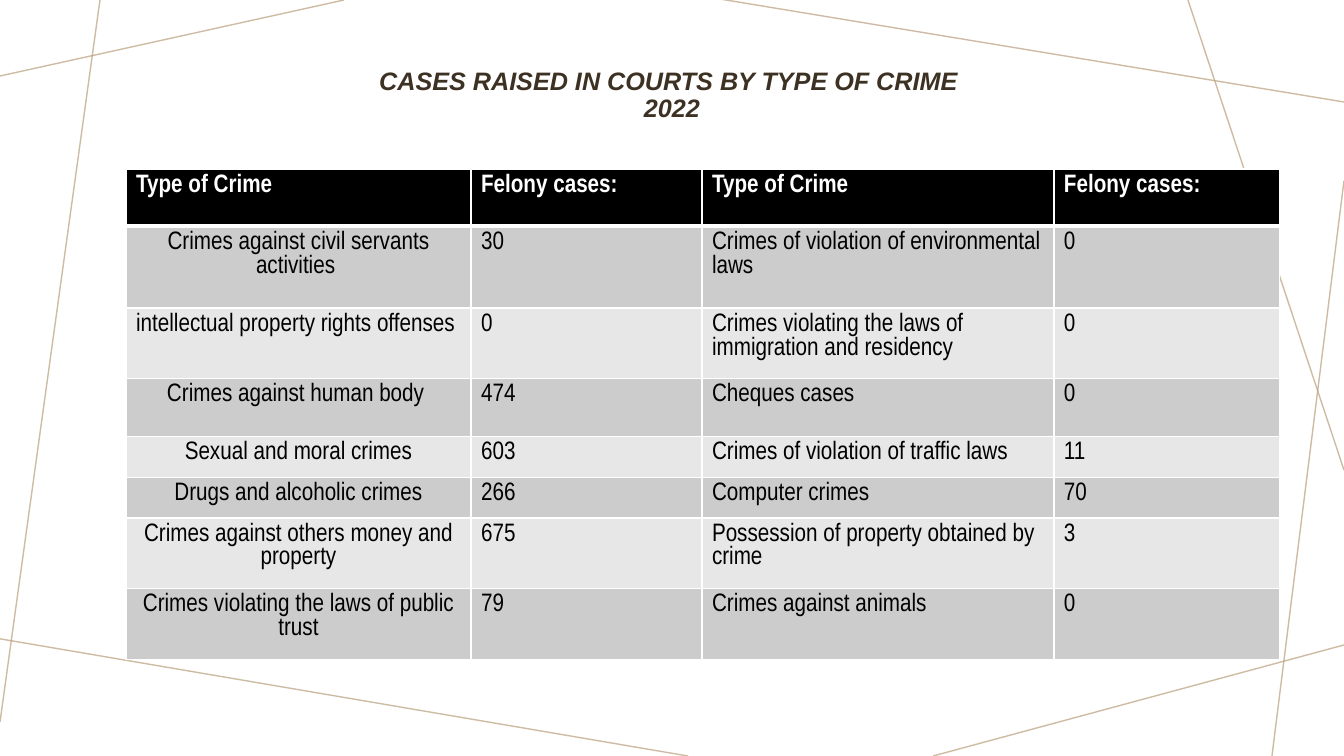
from lxml.etree import SubElement
from pptx import Presentation
from pptx.dml.color import RGBColor
from pptx.enum.shapes import MSO_CONNECTOR
from pptx.enum.text import MSO_ANCHOR, PP_ALIGN
from pptx.oxml.ns import qn
from pptx.util import Pt

PX = 12192000 / 1344
TAN, BROWN, BLACK, WHITE = "B9A07D", "3C3122", "000000", "FFFFFF"
BANDS = ["CCCCCC", "E7E7E7"]


def px(*lengths):
    """Turn pixel lengths into EMU."""
    return [round(length * PX) for length in lengths]


def write(frame, text, font="Arial Narrow", color=BLACK, bold=False,
          italic=False, align=PP_ALIGN.LEFT, spacing=None):
    frame.word_wrap = True
    para = frame.paragraphs[0]
    para.text = text
    para.alignment = align
    para.line_spacing = spacing
    for span in para.runs:
        span.font.name = font
        span.font.size = Pt(18)
        span.font.bold = bold
        span.font.italic = italic
        span.font.color.rgb = RGBColor.from_string(color)


deck = Presentation()
deck.slide_width, deck.slide_height = px(1344, 756)
page = deck.slides.add_slide(deck.slide_layouts[6])

# Background lines: start x, start y, end x, end y
background_lines = [
    (344, 0, 0, 76), (100, 0, 0, 722), (688, 756, -5, 638),
    (1344, 645, 933, 756), (1344, 181, 1272, 756),
    (1344, 470, 1188, 0), (1344, 102, 720, -1),
]
for ends in background_lines:
    line = page.shapes.add_connector(MSO_CONNECTOR.STRAIGHT, *px(*ends))
    line.line.width = Pt(1)
    line.line.color.rgb = RGBColor.from_string(TAN)
    tint = next(line.line._ln.iter(qn("a:srgbClr")))
    SubElement(tint, qn("a:alpha"), val="70000")
    SubElement(line._element.spPr, qn("a:effectLst"))

# Title
title = page.shapes.add_textbox(*px(126, 58, 1092, 152)).text_frame
title.vertical_anchor = MSO_ANCHOR.TOP
title.margin_top = px(11)[0]
write(title, "CASES RAISED IN COURTS BY TYPE OF CRIME \v2022", font="Arial",
      color=BROWN, bold=True, italic=True, align=PP_ALIGN.CENTER, spacing=0.9)

# Table of cases
rows = [
    ("Type of Crime", "Felony cases:", "Type of Crime", "Felony cases:"),
    ("Crimes against civil servants activities ", "30",
     "Crimes of violation of environmental laws", "0"),
    ("intellectual property rights offenses ", "0",
     "Crimes violating the laws of immigration and residency", "0"),
    ("Crimes against human body ", "474", "Cheques cases", "0"),
    ("Sexual and moral crimes", "603",
     "Crimes of violation of traffic laws", "11"),
    ("Drugs and alcoholic crimes", "266", "Computer crimes", "70"),
    ("Crimes against others money and property", "675",
     "Possession of property obtained by crime", "3"),
    ("Crimes violating the laws of public trust", "79",
     "Crimes against animals", "0"),
]
column_widths = [345, 231, 352, 226]
row_heights = [57, 82, 57, 58, 41, 40, 58, 57]
place = px(126, 169, sum(column_widths), sum(row_heights))
table = page.shapes.add_table(len(rows), len(column_widths), *place).table
for column, width in zip(table.columns, px(*column_widths)):
    column.width = width
for row, height in zip(table.rows, px(*row_heights)):
    row.height = height

for r, texts in enumerate(rows):
    header = r == 0
    for c, text in enumerate(texts):
        cell = table.cell(r, c)
        centered = c == 0 and not header
        write(cell.text_frame, text, color=WHITE if header else BLACK,
              bold=header, align=PP_ALIGN.CENTER if centered else PP_ALIGN.LEFT)
        properties = cell._tc.get_or_add_tcPr()
        for side in "LRTB":
            thick = (header and side == "B") or (r == 1 and side == "T")
            border = SubElement(properties, qn(f"a:ln{side}"),
                                w=str(Pt(3 if thick else 1)))
            solid = SubElement(border, qn("a:solidFill"))
            SubElement(solid, qn("a:srgbClr"), val=WHITE)
        cell.fill.solid()
        shade = BLACK if header else BANDS[(r - 1) % 2]
        cell.fill.fore_color.rgb = RGBColor.from_string(shade)

deck.save("out.pptx")
